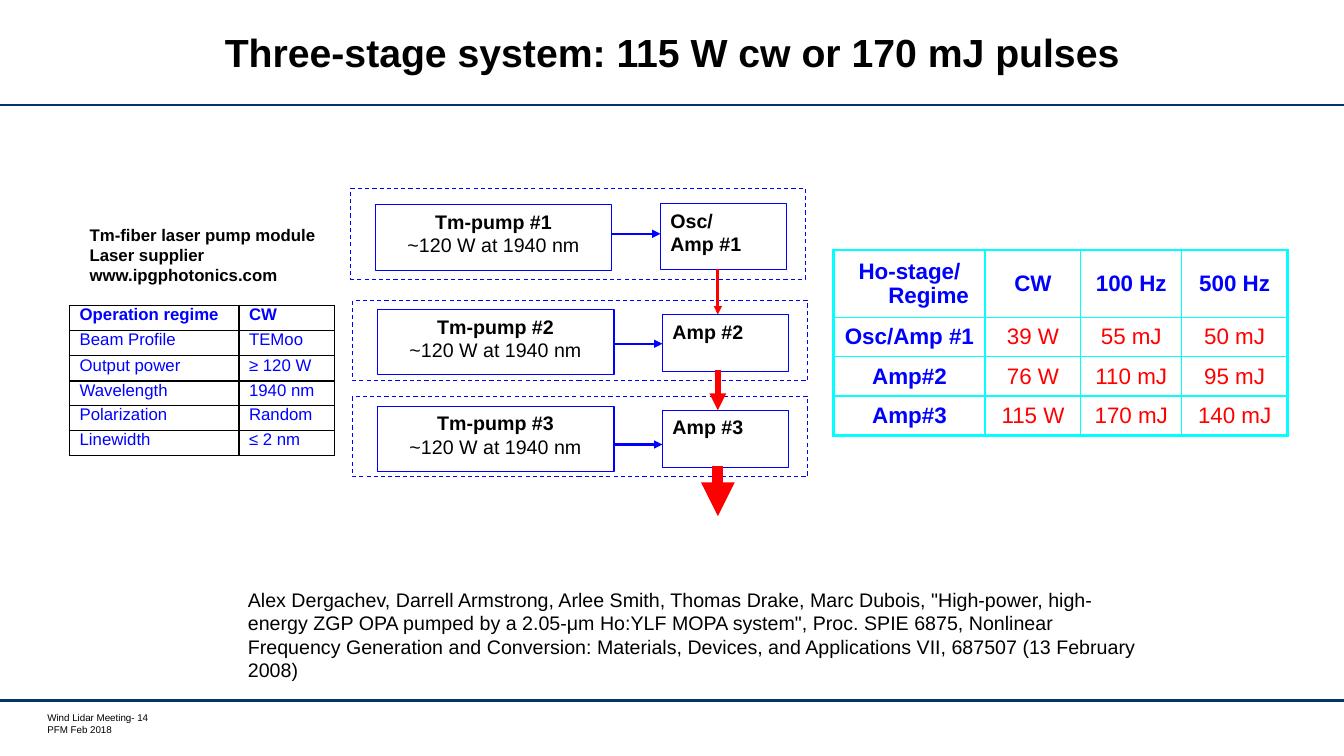
from dataclasses import dataclass

from lxml import etree
from pptx import Presentation
from pptx.dml.color import RGBColor
from pptx.enum import dml, shapes, text
from pptx.oxml import ns
from pptx.util import Pt

PX = 9144  # 100 px to the inch
FONT = "Arial"
HANGING = 38

BLACK = RGBColor(0x00, 0x00, 0x00)
BLUE = RGBColor(0x00, 0x00, 0xFF)
RED = RGBColor(0xFF, 0x00, 0x00)
CYAN = RGBColor(0x00, 0xFF, 0xFF)
NAVY = RGBColor(0x00, 0x37, 0x67)


@dataclass(frozen=True)
class Box:
    left: int
    top: int
    width: int
    height: int

    @property
    def right(self) -> int:
        return self.left + self.width

    def emu(self) -> tuple[int, ...]:
        return tuple(n * PX for n in (self.left, self.top, self.width, self.height))


@dataclass(frozen=True)
class Stage:
    frame: Box
    pump: Box
    amp: Box
    pump_name: str
    amp_lines: list[str]
    pump_beam_y: int


@dataclass(frozen=True)
class LaserBeam:
    top: int
    bottom: int
    weight: int


def write(frame, lines: list[str], size: int, color: RGBColor = BLACK,
          bold_lines: int = 0, align=text.PP_ALIGN.LEFT, hanging: int = 0) -> None:
    """Fill a text frame; the first bold_lines paragraphs are bold."""
    frame.word_wrap = True
    frame.text = "\n".join(lines)
    for i, paragraph in enumerate(frame.paragraphs):
        paragraph.alignment = align
        if hanging:
            properties = paragraph._p.get_or_add_pPr()
            properties.set("marL", str(hanging * PX))
            properties.set("indent", str(-hanging * PX))
        for run in paragraph.runs:
            run.font.name = FONT
            run.font.size = Pt(size)
            run.font.bold = i < bold_lines
            run.font.color.rgb = color


def add_text(slide, box: Box, lines: list[str], size: int, **style):
    frame = slide.shapes.add_textbox(*box.emu()).text_frame
    write(frame, lines, size, **style)
    return frame


def add_box(slide, box: Box, dashed: bool = False):
    rect = slide.shapes.add_shape(shapes.MSO_SHAPE.RECTANGLE, *box.emu())
    rect.shadow.inherit = False
    rect.fill.background()
    rect.line.color.rgb = BLUE
    rect.line.width = Pt(0.75)
    if dashed:
        rect.line.dash_style = dml.MSO_LINE.DASH
    rect.text_frame.vertical_anchor = text.MSO_ANCHOR.TOP
    return rect.text_frame


def add_line(slide, start: tuple[int, int], end: tuple[int, int],
             color: RGBColor, weight: float, arrow: bool = False) -> None:
    line = slide.shapes.add_connector(
        shapes.MSO_CONNECTOR.STRAIGHT, *(n * PX for n in start + end))
    line.line.color.rgb = color
    line.line.width = Pt(weight)
    if arrow:
        etree.SubElement(line.line._get_or_add_ln(), ns.qn("a:tailEnd"), type="triangle")
    etree.SubElement(line._element.spPr, ns.qn("a:effectLst"))


def set_borders(cell, color: RGBColor, weights: dict[str, float]) -> None:
    properties = cell._tc.get_or_add_tcPr()
    for side in "LRTB":
        line = etree.SubElement(properties, ns.qn(f"a:ln{side}"), w=str(Pt(weights[side])))
        fill = etree.SubElement(line, ns.qn("a:solidFill"))
        etree.SubElement(fill, ns.qn("a:srgbClr"), val=str(color))


def add_grid(slide, left: int, top: int, columns: list[int], rows: list[int]):
    box = Box(left, top, sum(columns), sum(rows))
    grid = slide.shapes.add_table(len(rows), len(columns), *box.emu()).table
    grid.first_row = grid.horz_banding = False
    for column, width in zip(grid.columns, columns):
        column.width = width * PX
    for row, height in zip(grid.rows, rows):
        row.height = height * PX
    return grid


def add_regime_table(slide) -> None:
    values = [
        ["Ho-stage/ Regime", "CW", "100 Hz", "500 Hz"],
        ["Osc/Amp #1", "39 W", "55 mJ", "50 mJ"],
        ["Amp#2", "76 W", "110 mJ", "95 mJ"],
        ["Amp#3", "115 W", "170 mJ", "140 mJ"],
    ]
    grid = add_grid(slide, 827, 248, [150, 95, 100, 105], [67, 39, 39, 39])
    last = len(values) - 1
    for r, row in enumerate(values):
        for c, value in enumerate(row):
            cell = grid.cell(r, c)
            heading = r == 0 or c == 0
            write(cell.text_frame, [value], 16, BLUE if heading else RED,
                  int(heading), text.PP_ALIGN.CENTER, HANGING)
            cell.vertical_anchor = text.MSO_ANCHOR.MIDDLE
            outer = {"L": c == 0, "R": c == last, "T": r == 0, "B": r == last}
            set_borders(cell, CYAN, {s: 2.25 if o else 1 for s, o in outer.items()})
            cell.fill.background()


def add_pump_table(slide) -> None:
    values = [
        ("Operation regime", "CW"),
        ("Beam Profile", "TEMoo"),
        ("Output power", "≥ 120 W"),
        ("Wavelength", "1940 nm"),
        ("Polarization", "Random"),
        ("Linewidth", "≤ 2 nm"),
    ]
    grid = add_grid(slide, 69, 303, [168, 95], [25, 25, 25, 24, 25, 25])
    for r, row in enumerate(values):
        for c, value in enumerate(row):
            cell = grid.cell(r, c)
            write(cell.text_frame, [value], 12, BLUE, int(r == 0))
            cell.margin_top = cell.margin_bottom = 0
            set_borders(cell, BLACK, dict.fromkeys("LRTB", 1))
            cell.fill.background()


STAGES = [
    Stage(Box(348, 187, 451, 90), Box(372, 203, 235, 65), Box(655, 202, 125, 65),
          "Tm-pump #1", ["Osc/", "Amp #1"], 232),
    Stage(Box(350, 298, 451, 80), Box(374, 307, 235, 65), Box(657, 312, 125, 57),
          "Tm-pump #2", ["Amp #2"], 341),
    Stage(Box(350, 393, 451, 80), Box(374, 403, 235, 65), Box(657, 407, 125, 57),
          "Tm-pump #3", ["Amp #3"], 441),
]
LASER_X = 712
LASER_BEAMS = [LaserBeam(267, 312, 2), LaserBeam(367, 407, 4), LaserBeam(462, 512, 8)]


def main() -> None:
    deck = Presentation()
    deck.slide_width, deck.slide_height = 1333 * PX, 750 * PX
    slide = deck.slides.add_slide(deck.slide_layouts[5])

    # Rules and footer
    for y in (104, 695):
        add_line(slide, (0, y), (1333, y), NAVY, 1.75)
    footer = add_text(slide, Box(47, 706, 159, 24),
                      ["Wind Lidar Meeting- 14", "PFM Feb 2018"], 7)
    footer.margin_left = footer.margin_right = footer.margin_top = footer.margin_bottom = 0

    # Title
    title = slide.shapes.title
    title.left, title.top, title.width, title.height = Box(137, 11, 1059, 89).emu()
    write(title.text_frame, ["Three-stage system: 115 W cw or 170 mJ pulses"], 28,
          bold_lines=1, align=text.PP_ALIGN.CENTER)
    title.text_frame.auto_size = text.MSO_AUTO_SIZE.NONE
    title.text_frame.vertical_anchor = text.MSO_ANCHOR.MIDDLE
    title.text_frame.paragraphs[0].line_spacing = Pt(28)

    # Citation
    citation = add_text(slide, Box(236, 578, 915, 81), [
        "Alex Dergachev, Darrell Armstrong, Arlee Smith, Thomas Drake, Marc Dubois, "
        '"High-power, high-energy ZGP OPA pumped by a 2.05-μm Ho:YLF MOPA system", '
        "Proc. SPIE 6875, Nonlinear Frequency Generation and Conversion: Materials, "
        "Devices, and Applications VII, 687507 (13 February 2008)"], 14)
    citation.auto_size = text.MSO_AUTO_SIZE.SHAPE_TO_FIT_TEXT

    # Output by stage and regime
    add_regime_table(slide)

    # Pumped stages
    for stage in STAGES:
        add_box(slide, stage.frame, dashed=True)
        write(add_box(slide, stage.pump), [stage.pump_name, "~120 W at 1940 nm"], 14,
              bold_lines=1, align=text.PP_ALIGN.CENTER)
        write(add_box(slide, stage.amp), stage.amp_lines, 14, bold_lines=2)
        add_line(slide, (stage.pump.right, stage.pump_beam_y),
                 (stage.amp.left, stage.pump_beam_y), BLUE, 1.5, arrow=True)

    # Amplified beam, growing from stage to stage
    for beam in LASER_BEAMS:
        add_line(slide, (LASER_X, beam.top), (LASER_X, beam.bottom),
                 RED, beam.weight, arrow=True)

    # Pump laser data
    add_text(slide, Box(79, 218, 245, 80),
             ["Tm-fiber laser pump module", "Laser supplier", "www.ipgphotonics.com"],
             12, bold_lines=3, hanging=HANGING)
    add_pump_table(slide)

    deck.save("out.pptx")


if __name__ == "__main__":
    main()
